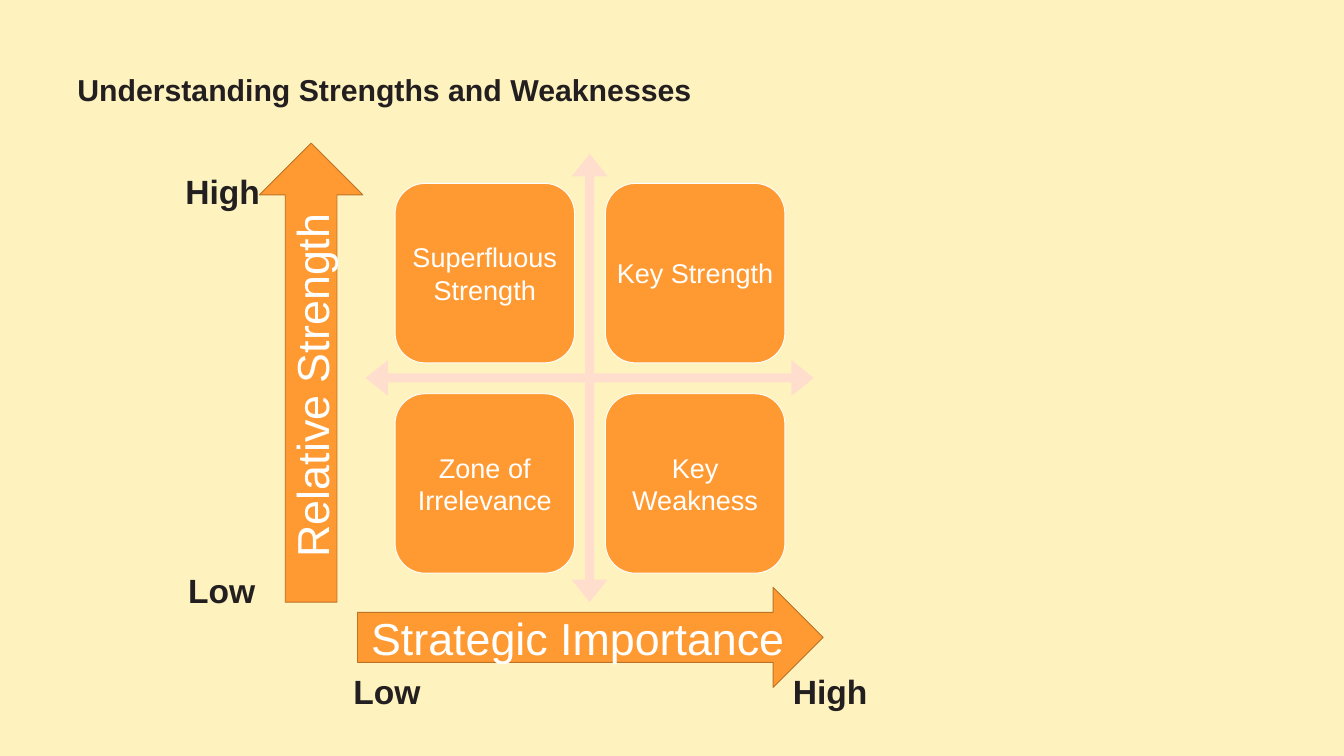
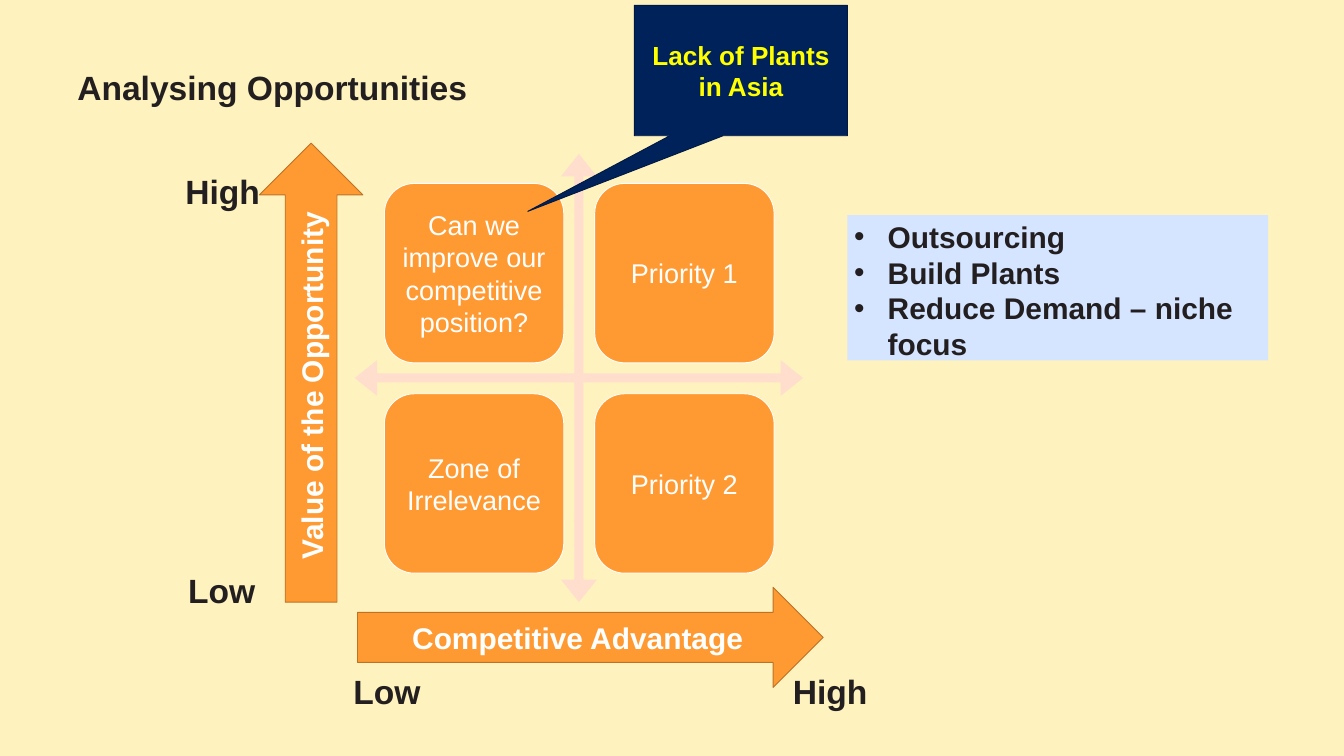
"""Builds two strategy matrix slides."""
import pptx
import pptx.dml.color
import pptx.enum.shapes
import pptx.enum.text
import pptx.oxml.ns
import pptx.util
from lxml import etree

RGBColor = pptx.dml.color.RGBColor
Preset = pptx.enum.shapes.MSO_SHAPE
Anchor = pptx.enum.text.MSO_ANCHOR
Align = pptx.enum.text.PP_ALIGN
AutoSize = pptx.enum.text.MSO_AUTO_SIZE

CREAM = RGBColor(0xFE, 0xF2, 0xBE)
INK = RGBColor(0x23, 0x1F, 0x20)
ORANGE = RGBColor(0xFF, 0x9A, 0x32)
BROWN = RGBColor(0xBD, 0x72, 0x25)
BLUSH = RGBColor(0xFF, 0xDE, 0xCE)
WHITE = RGBColor(0xFF, 0xFF, 0xFF)
NAVY = RGBColor(0x00, 0x22, 0x5B)
DARK_NAVY = RGBColor(0x00, 0x19, 0x43)
YELLOW = RGBColor(0xFF, 0xFF, 0x00)
PALE_BLUE = RGBColor(0xD5, 0xE5, 0xFF)

FONT = "Arial"
EMU_PER_PX = 9144
CELL, PITCH, CROSS, CROSS_TOP, CELL_INSET = 267, 313, 667, 229, 44
TITLE_AND_BODY, TITLE_ONLY = 1, 5


def px(length):
    """Turn px into EMU, at 100 px to the inch."""
    return pptx.util.Emu(length * EMU_PER_PX)


def write(frame, *lines, size, color=INK, bold=False, align=Align.LEFT,
          anchor=Anchor.TOP, spacing=None, bullet=None, indent=50):
    """Fill a text frame with one paragraph for each line."""
    frame.vertical_anchor = anchor
    for index, line in enumerate(lines):
        paragraph = frame.add_paragraph() if index else frame.paragraphs[0]
        if bullet:
            properties = paragraph._p.get_or_add_pPr()
            properties.set("marL", str(px(indent)))
            properties.set("indent", str(px(-indent)))
            etree.SubElement(properties, pptx.oxml.ns.qn("a:buChar"), char=bullet)
        paragraph.alignment = align
        paragraph.space_before = pptx.util.Pt(0)
        if spacing:
            paragraph.line_spacing = spacing
        run = paragraph.add_run()
        run.text = line
        run.font.name = FONT
        run.font.size = pptx.util.Pt(size)
        run.font.bold = bold
        run.font.color.rgb = color


class Deck:
    """Holds the presentation style and the current slide."""

    def __init__(self):
        """Set the slide size and the shared background."""
        self.presentation = pptx.Presentation()
        self.presentation.slide_width = px(2000)
        self.presentation.slide_height = px(1125)
        background = self.presentation.slide_master.background.fill
        background.solid()
        background.fore_color.rgb = CREAM
        self.slide = None

    def place(self, element, left, top, width, height):
        """Move an element to its place."""
        element.left, element.top = px(left), px(top)
        element.width, element.height = px(width), px(height)

    def start(self, layout, title, top, height, size):
        """Begin a slide with its title."""
        self.slide = self.presentation.slides.add_slide(
            self.presentation.slide_layouts[layout])
        heading = self.slide.shapes.title
        self.place(heading, 105, top, 1783, height)
        heading.text_frame.auto_size = AutoSize.NONE
        write(heading.text_frame, title, size=size, bold=True,
              anchor=Anchor.BOTTOM, spacing=0.9)

    def shape(self, preset, left, top, width, height, fill, line=None, adjust=()):
        """Add a preset shape in flat style."""
        figure = self.slide.shapes.add_shape(
            preset, px(left), px(top), px(width), px(height))
        figure.shadow.inherit = False
        figure.fill.solid()
        figure.fill.fore_color.rgb = fill
        if line is None:
            figure.line.fill.background()
        else:
            figure.line.color.rgb = line
            figure.line.width = pptx.util.Pt(1)
        for index, value in enumerate(adjust):
            figure.adjustments[index] = value
        return figure

    def matrix(self, left, quadrants):
        """Draw the cross and its quadrants, row by row."""
        self.shape(Preset.QUAD_ARROW, left, CROSS_TOP, CROSS, CROSS, BLUSH,
                   adjust=(0.02, 0.04, 0.05))
        for index, label in enumerate(quadrants):
            row, column = divmod(index, 2)
            quadrant = self.shape(
                Preset.ROUNDED_RECTANGLE, left + CELL_INSET + column * PITCH,
                CROSS_TOP + CELL_INSET + row * PITCH, CELL, CELL, ORANGE, WHITE)
            frame = quadrant.text_frame
            frame.margin_left = frame.margin_right = 0
            frame.margin_top = frame.margin_bottom = 0
            write(frame, label, size=29, color=WHITE, align=Align.CENTER,
                  anchor=Anchor.MIDDLE)

    def axes(self, vertical, horizontal, size, bold=False):
        """Draw both axis arrows with their end labels."""
        rise = self.shape(Preset.UP_ARROW, 386, 213, 154, 683, ORANGE, BROWN)
        rise.text_frame._txBody.bodyPr.set("vert", "vert270")
        reach = self.shape(Preset.RIGHT_ARROW, 532, 874, 693, 149, ORANGE, BROWN)
        for axis, name in ((rise, vertical), (reach, horizontal)):
            write(axis.text_frame, name, size=size, color=WHITE, bold=bold,
                  align=Align.CENTER, anchor=Anchor.MIDDLE)
        for level, left, top, width in (("High", 266, 249, 132), ("Low", 270, 843, 121),
                                        ("High", 1170, 993, 132), ("Low", 516, 993, 121)):
            self.label(level, left, top, width)

    def label(self, text, left, top, width):
        """Add a bold label on one line."""
        box = self.slide.shapes.add_textbox(px(left), px(top), px(width), px(71))
        box.text_frame.word_wrap = False
        box.text_frame.auto_size = AutoSize.SHAPE_TO_FIT_TEXT
        write(box.text_frame, text, size=36, bold=True)

    def callout(self, text, left, top, width, height, tip):
        """Add a callout that points at its tip."""
        note = self.shape(Preset.RECTANGULAR_CALLOUT, left, top, width, height,
                          NAVY, DARK_NAVY, tip)
        write(note.text_frame, text, size=28, color=YELLOW, bold=True,
              align=Align.CENTER, anchor=Anchor.MIDDLE)

    def bullets(self, lines, left, top, width, height):
        """Fill the body placeholder with a bulleted list."""
        body = self.slide.placeholders[1]
        self.place(body, left, top, width, height)
        body.fill.solid()
        body.fill.fore_color.rgb = PALE_BLUE
        body.text_frame.auto_size = AutoSize.SHAPE_TO_FIT_TEXT
        write(body.text_frame, *lines, size=32, bold=True, bullet="•")


def main():
    """Build and save both slides."""
    deck = Deck()

    deck.start(TITLE_ONLY, "Understanding Strengths and Weaknesses", 104, 62, 32.4)
    deck.matrix(544, ("Superfluous Strength", "Key Strength",
                      "Zone of Irrelevance", "Key Weakness"))
    deck.axes("Relative Strength", "Strategic Importance", 48)

    deck.start(TITLE_AND_BODY, "Analysing Opportunities", 61, 105, 36)
    deck.matrix(528, ("Can we improve our competitive position?", "Priority 1",
                      "Zone of Irrelevance", "Priority 2"))
    deck.axes("Value of the Opportunity", "Competitive Advantage", 32, bold=True)
    deck.callout("Lack of Plants in Asia", 944, 8, 317, 194, (-1, 1.08))
    deck.bullets(("Outsourcing", "Build Plants", "Reduce Demand – niche focus"),
                 1261, 320, 626, 226)

    deck.presentation.save("out.pptx")


if __name__ == "__main__":
    main()
